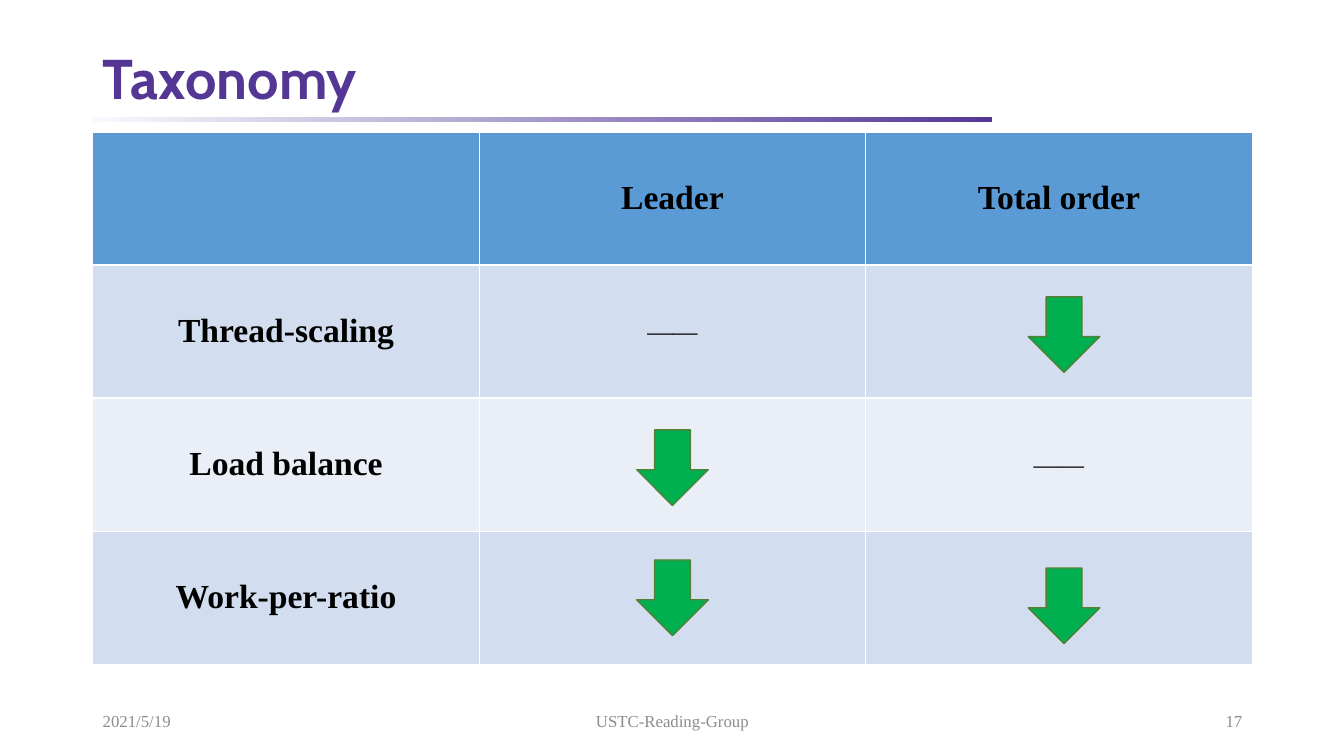
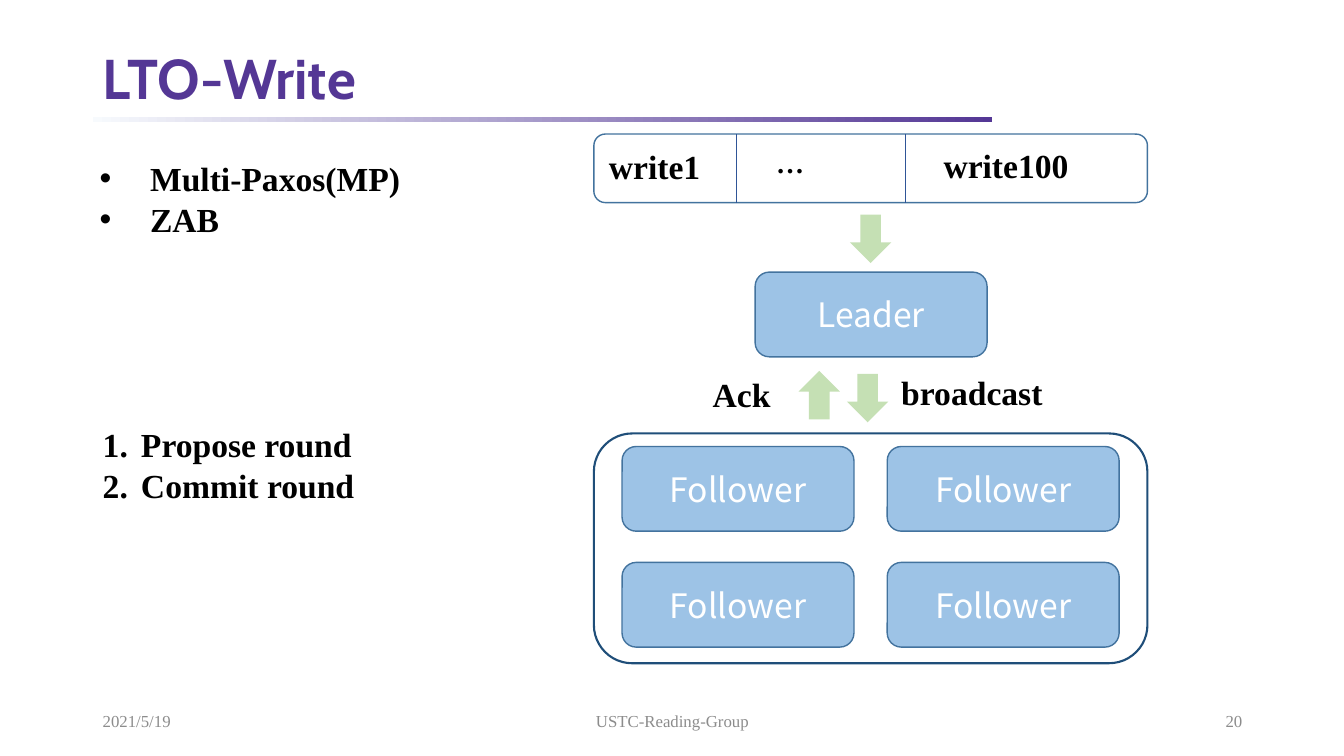
import pptx
import pptx.util
from lxml import etree
from pptx.dml.color import RGBColor
from pptx.enum.shapes import MSO_CONNECTOR, MSO_SHAPE
from pptx.enum.text import MSO_ANCHOR, MSO_AUTO_SIZE, PP_ALIGN
from pptx.oxml.ns import qn
from pptx.util import Inches, Pt

PURPLE = RGBColor(0x54, 0x37, 0x95)
PALE = RGBColor(0xF7, 0xFA, 0xFD)
BLACK = RGBColor(0, 0, 0)
WHITE = RGBColor(0xFF, 0xFF, 0xFF)
GREY = RGBColor(0x8C, 0x8C, 0x8C)
HEADER_BLUE = RGBColor(0x5B, 0x9B, 0xD5)
ROW_BLUES = [RGBColor(0xD2, 0xDE, 0xEF), RGBColor(0xEA, 0xEF, 0xF7)]
GREEN = RGBColor(0x00, 0xB0, 0x50)
DARK_GREEN = RGBColor(0x53, 0x80, 0x35)
LIGHT_GREEN = RGBColor(0xC5, 0xE0, 0xB4)
NODE_BLUE = RGBColor(0x9D, 0xC3, 0xE6)
NODE_LINE = RGBColor(0x43, 0x73, 0x9E)
FRAME_LINE = RGBColor(0x1F, 0x4E, 0x79)
DIVIDER = RGBColor(0x2F, 0x55, 0x97)

SERIF, TITLE_FONT, NODE_FONT = "Times New Roman", "Cabin", "Noto Sans CJK SC"
SLIDE_WIDTH, SLIDE_HEIGHT = 13.33, 7.5
MARGIN, CONTENT_WIDTH = 0.92, 11.5

# left, width, alignment of the date, the group name and the slide number
FOOTER_SLOTS = [
    (MARGIN, 3, PP_ALIGN.LEFT),
    (4.42, 4.5, PP_ALIGN.CENTER),
    (9.42, 3, PP_ALIGN.RIGHT),
]
DATE, GROUP_NAME = "2021/5/19", "USTC-Reading-Group"

TAXONOMY = [
    ["", "Leader", "Total order"],
    ["Thread-scaling", "——", ""],
    ["Load balance", "", "——"],
    ["Work-per-ratio", "", ""],
]
TABLE_TOP, ROW_HEIGHT = 1.31, 1.32
# row, column, and shift from the middle of the cell
DOWN_MARKS = [(1, 2, 0.05, 0.03), (2, 1, 0, 0.03), (3, 1, 0, 0), (3, 2, 0.05, 0.08)]
MARK_SIZE = (0.71, 0.75)

NODE_SIZE = (2.3, 0.84)
LEADER_AT = (7.49, 2.7)
FOLLOWERS_AT, FOLLOWER_STEP = (6.17, 4.43), (2.63, 1.15)
FRAME_LEFT, FRAME_WIDTH = 5.89, 5.49
QUEUE_TOP, QUEUE_HEIGHT = 1.33, 0.68
QUEUE_DIVIDERS = [7.3, 8.98]
FLOW_ARROW_SIZE = (0.41, 0.48)
FLOW_ARROWS = [
    (MSO_SHAPE.DOWN_ARROW, 8.43, 2.13),
    (MSO_SHAPE.DOWN_ARROW, 8.4, 3.71),
    (MSO_SHAPE.UP_ARROW, 7.92, 3.68),
]
LABELS = [
    ("write1", 24, (5.94, 1.4, 1.38, 0.58)),
    ("…", 20, (7.6, 1.39, 1.38, 0.5)),
    ("write100", 24, (9.26, 1.39, 1.84, 0.58)),
    ("broadcast", 24, (8.84, 3.64, 2.12, 0.58)),
    ("Ack", 24, (6.97, 3.66, 1.06, 0.58)),
]
# box, indent, bullet tag, bullet attribute, items
LISTS = [
    ((0.89, 1.52, 4.26, 0.91), 0.5, "a:buChar", ("char", "•"),
     ["Multi-Paxos(MP)", "ZAB"]),
    ((MARGIN, 4.16, 2.98, 0.91), 0.38, "a:buAutoNum", ("type", "arabicPeriod"),
     ["Propose round", "Commit round"]),
]


def inches(*lengths):
    return [Inches(length) for length in lengths]


def write(paragraph, text, size, color=BLACK, font=SERIF, bold=False, align=PP_ALIGN.LEFT):
    paragraph.alignment = align
    run = paragraph.add_run()
    run.text = text
    run.font.size = Pt(size)
    run.font.name = font
    run.font.bold = bold
    run.font.color.rgb = color


def add_text_box(slide, box, anchor=MSO_ANCHOR.TOP):
    frame = slide.shapes.add_textbox(*inches(*box)).text_frame
    frame.word_wrap = True
    frame.vertical_anchor = anchor
    return frame


def add_figure(slide, kind, box, fill=None, line=None, line_width=1):
    """Add a preset shape; no fill or line colour means none is drawn."""
    shape = slide.shapes.add_shape(kind, *inches(*box))
    shape.shadow.inherit = False
    if fill is None:
        shape.fill.background()
    else:
        shape.fill.solid()
        shape.fill.fore_color.rgb = fill
    if line is None:
        shape.line.fill.background()
    else:
        shape.line.color.rgb = line
        shape.line.width = Pt(line_width)
    return shape


def add_node(slide, left, top, text):
    node = add_figure(slide, MSO_SHAPE.ROUNDED_RECTANGLE, (left, top, *NODE_SIZE),
                      NODE_BLUE, NODE_LINE)
    node.text_frame.vertical_anchor = MSO_ANCHOR.MIDDLE
    write(node.text_frame.paragraphs[0], text, 24, WHITE, NODE_FONT, align=PP_ALIGN.CENTER)


def add_divider(slide, left, top, bottom):
    divider = slide.shapes.add_connector(MSO_CONNECTOR.STRAIGHT, *inches(left, top, left, bottom))
    divider.line.color.rgb = DIVIDER
    divider.line.width = Pt(0.5)
    etree.SubElement(divider._element.spPr, qn("a:effectLst"))


def add_list(slide, box, indent, tag, attribute, items):
    frame = add_text_box(slide, box)
    for index, item in enumerate(items):
        paragraph = frame.add_paragraph() if index else frame.paragraphs[0]
        properties = paragraph._p.get_or_add_pPr()
        properties.set("marL", str(Inches(indent)))
        properties.set("indent", str(-Inches(indent)))
        if tag == "a:buChar":
            etree.SubElement(properties, qn("a:buFont")).set("typeface", "Arial")
        etree.SubElement(properties, qn(tag)).set(*attribute)
        write(paragraph, item, 24, bold=True)


def add_slide(presentation, title, number):
    """Add a slide with the shared title, gradient rule and footer."""
    slide = presentation.slides.add_slide(presentation.slide_layouts[5])
    rule = add_figure(slide, MSO_SHAPE.RECTANGLE, (MARGIN, 1.16, 8.92, 0.05))
    rule.fill.gradient()
    rule.fill.gradient_angle = 0
    for stop, color in zip(rule.fill.gradient_stops, (PALE, PURPLE)):
        stop.color.rgb = color

    heading = slide.shapes.title
    heading.left, heading.top, heading.width, heading.height = inches(
        MARGIN, 0.43, CONTENT_WIDTH, 0.75)
    heading.text_frame.auto_size = MSO_AUTO_SIZE.NONE
    heading.text_frame.vertical_anchor = MSO_ANCHOR.MIDDLE
    paragraph = heading.text_frame.paragraphs[0]
    paragraph.line_spacing = 0.9
    write(paragraph, title, 40, PURPLE, TITLE_FONT, True)

    for text, (left, width, align) in zip((DATE, GROUP_NAME, str(number)), FOOTER_SLOTS):
        frame = add_text_box(slide, (left, 6.95, width, 0.4), MSO_ANCHOR.MIDDLE)
        write(frame.paragraphs[0], text, 12, GREY, align=align)
    return slide


def build_taxonomy(presentation):
    slide = add_slide(presentation, "Taxonomy", 17)
    rows, columns = len(TAXONOMY), len(TAXONOMY[0])
    column_width = CONTENT_WIDTH / columns
    table = slide.shapes.add_table(rows, columns, *inches(
        MARGIN, TABLE_TOP, CONTENT_WIDTH, ROW_HEIGHT * rows)).table
    for row, texts in enumerate(TAXONOMY):
        for column, text in enumerate(texts):
            cell = table.cell(row, column)
            cell.vertical_anchor = MSO_ANCHOR.MIDDLE
            cell.fill.solid()
            cell.fill.fore_color.rgb = ROW_BLUES[(row - 1) % 2] if row else HEADER_BLUE
            if text:
                is_heading = row == 0 or column == 0
                write(cell.text_frame.paragraphs[0], text, 24 if is_heading else 18,
                      bold=is_heading, align=PP_ALIGN.CENTER)

    width, height = MARK_SIZE
    for row, column, shift_x, shift_y in DOWN_MARKS:
        left = MARGIN + (column + 0.5) * column_width - width / 2 + shift_x
        top = TABLE_TOP + (row + 0.5) * ROW_HEIGHT - height / 2 + shift_y
        add_figure(slide, MSO_SHAPE.DOWN_ARROW, (left, top, width, height), GREEN, DARK_GREEN)


def build_write_path(presentation):
    slide = add_slide(presentation, "LTO-Write", 20)
    add_figure(slide, MSO_SHAPE.ROUNDED_RECTANGLE,
               (FRAME_LEFT, QUEUE_TOP, FRAME_WIDTH, QUEUE_HEIGHT), line=NODE_LINE)
    add_figure(slide, MSO_SHAPE.ROUNDED_RECTANGLE,
               (FRAME_LEFT, 4.3, FRAME_WIDTH, 2.28), line=FRAME_LINE, line_width=1.5)
    for left in QUEUE_DIVIDERS:
        add_divider(slide, left, QUEUE_TOP, QUEUE_TOP + QUEUE_HEIGHT)

    add_node(slide, *LEADER_AT, "Leader")
    for row in range(2):
        for column in range(2):
            add_node(slide, FOLLOWERS_AT[0] + column * FOLLOWER_STEP[0],
                     FOLLOWERS_AT[1] + row * FOLLOWER_STEP[1], "Follower")
    for kind, left, top in FLOW_ARROWS:
        add_figure(slide, kind, (left, top, *FLOW_ARROW_SIZE), LIGHT_GREEN)
    for text, size, box in LABELS:
        write(add_text_box(slide, box).paragraphs[0], text, size, bold=True)
    for entry in LISTS:
        add_list(slide, *entry)


def main():
    presentation = pptx.Presentation()
    presentation.slide_width, presentation.slide_height = inches(SLIDE_WIDTH, SLIDE_HEIGHT)
    build_taxonomy(presentation)
    build_write_path(presentation)
    presentation.save("out.pptx")


if __name__ == "__main__":
    main()
